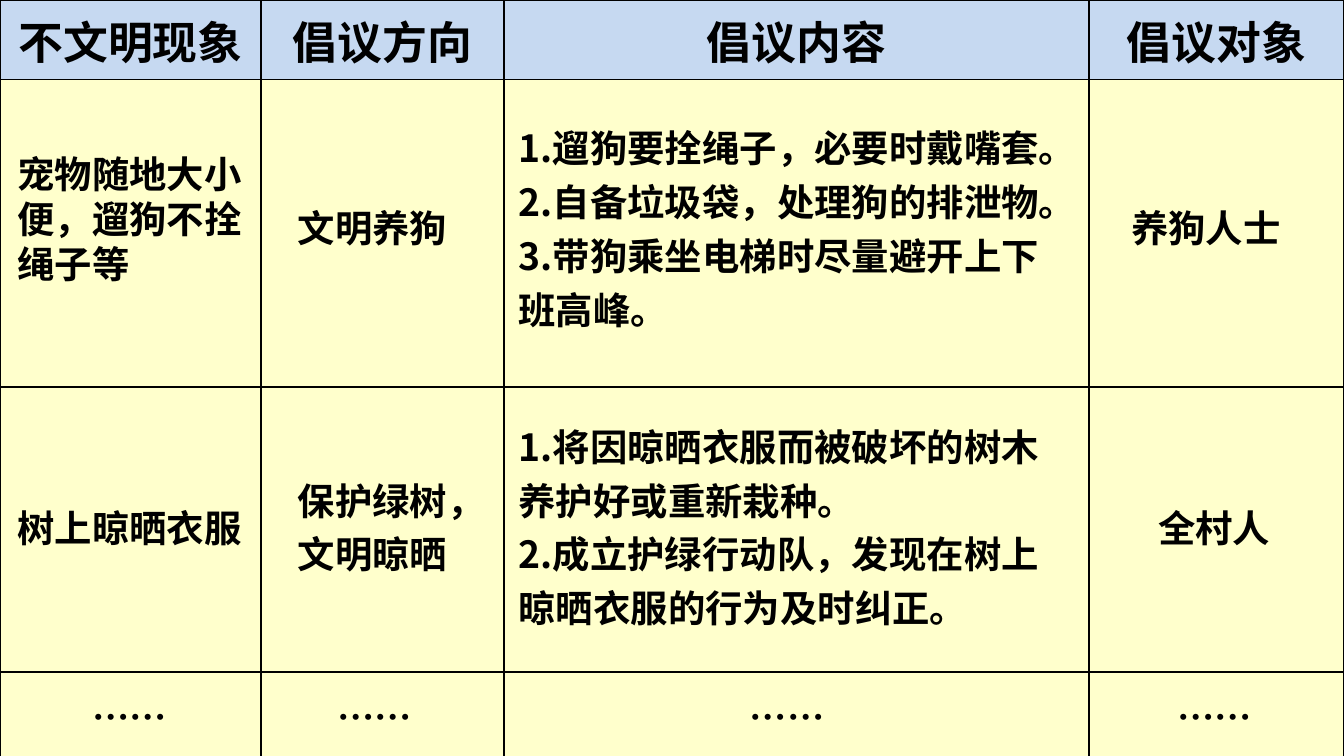
from dataclasses import dataclass

import pptx
import pptx.dml.color
import pptx.enum.text
import pptx.oxml
import pptx.oxml.ns
import pptx.util

Cm = pptx.util.Cm


@dataclass(frozen=True)
class Theme:
    font: str = "Noto Sans CJK SC"
    ink: str = "000000"
    header_fill: str = "C6D9F1"
    body_fill: str = "FFFFCC"
    header_size: int = 24
    body_size: int = 20
    border_width: int = 1
    line_spacing: float = 1.2


THEME = Theme()

COLUMN_WIDTHS = [4.93, 4.6, 11.05, 4.82]
ROW_HEIGHTS = [1.5, 5.82, 5.38, 1.6]
HEADERS = ["不文明现象", "倡议方向", "倡议内容", "倡议对象"]

# Each entry: box (left, top, width, height) in cm, paragraphs, wraps, line spacing
PET_ROW = [
    ((0.08, 2.74, 4.83, 2.82), ["宠物随地大小", "便，遛狗不拴", "绳子等"], False, 1.0),
    ((5.38, 3.58, 3.38, 1.14), ["文明养狗"], False, THEME.line_spacing),
    ((9.55, 2.08, 10.69, 4.22),
     ["1.遛狗要拴绳子，必要时戴嘴套。", "2.自备垃圾袋，处理狗的排泄物。",
      "3.带狗乘坐电梯时尽量避开上下班高峰。"], True, THEME.line_spacing),
    ((21.13, 3.58, 3.38, 1.14), ["养狗人士"], False, THEME.line_spacing),
]
LAUNDRY_ROW = [
    ((0.08, 9.25, 4.83, 1.27), ["树上晾晒衣服"], False, THEME.line_spacing),
    ((5.38, 8.74, 4.09, 2.31), ["保护绿树，", "文明晾晒"], False, THEME.line_spacing),
    ((9.55, 7.72, 10.69, 4.37),
     ["1.将因晾晒衣服而被破坏的树木养护好或重新栽种。",
      "2.成立护绿行动队，发现在树上晾晒衣服的行为及时纠正。"], True, THEME.line_spacing),
    ((21.64, 9.25, 2.67, 1.27), ["全村人"], False, THEME.line_spacing),
]
MORE_ROW = [
    ((left, 12.83, 1.96, 1.14), ["……"], False, THEME.line_spacing)
    for left in (1.5, 6.12, 13.92, 22.0)
]


def rgb(value):
    return pptx.dml.color.RGBColor.from_string(value)


def format_runs(paragraph, size):
    for run in paragraph.runs:
        run.font.size = pptx.util.Pt(size)
        run.font.bold = True
        run.font.name = THEME.font
        run.font.color.rgb = rgb(THEME.ink)
        east_asian = pptx.oxml.parse_xml(
            f'<a:ea {pptx.oxml.ns.nsdecls("a")} typeface="{THEME.font}"/>')
        run.font._element.find(pptx.oxml.ns.qn("a:latin")).addnext(east_asian)


def add_borders(cell):
    properties = cell._tc.get_or_add_tcPr()
    width = pptx.util.Pt(THEME.border_width)
    for side in ("lnL", "lnR", "lnT", "lnB"):
        properties.append(pptx.oxml.parse_xml(
            f'<a:{side} {pptx.oxml.ns.nsdecls("a")} w="{width}"><a:solidFill>'
            f'<a:srgbClr val="{THEME.ink}"/></a:solidFill></a:{side}>'))


def add_grid(slide, left, top, width, height):
    """Add the ruled table with its header row; its body cells hold only colour."""
    table = slide.shapes.add_table(
        len(ROW_HEIGHTS), len(COLUMN_WIDTHS),
        Cm(left), Cm(top), Cm(width), Cm(height)).table
    table.first_row = False
    table.horz_banding = False
    for column, column_width in zip(table.columns, COLUMN_WIDTHS):
        column.width = Cm(column_width)
    for row_index, (row, row_height) in enumerate(zip(table.rows, ROW_HEIGHTS)):
        row.height = Cm(row_height)
        for cell in row.cells:
            add_borders(cell)
            cell.fill.solid()
            cell.fill.fore_color.rgb = rgb(
                THEME.body_fill if row_index else THEME.header_fill)
    for cell, header in zip(table.rows[0].cells, HEADERS):
        cell.vertical_anchor = pptx.enum.text.MSO_ANCHOR.MIDDLE
        cell.text_frame.text = header
        paragraph = cell.text_frame.paragraphs[0]
        paragraph.alignment = pptx.enum.text.PP_ALIGN.CENTER
        format_runs(paragraph, THEME.header_size)


def add_entry(slide, box, lines, wraps, line_spacing):
    text_frame = slide.shapes.add_textbox(*map(Cm, box)).text_frame
    text_frame.word_wrap = wraps
    text_frame.auto_size = pptx.enum.text.MSO_AUTO_SIZE.SHAPE_TO_FIT_TEXT
    text_frame.text = "\n".join(lines)
    for paragraph in text_frame.paragraphs:
        paragraph.line_spacing = line_spacing
        format_runs(paragraph, THEME.body_size)


def main():
    presentation = pptx.Presentation()
    presentation.slide_width = Cm(25.4)
    presentation.slide_height = Cm(14.29)
    slide = presentation.slides.add_slide(presentation.slide_layouts[6])
    add_grid(slide, 0, 0, sum(COLUMN_WIDTHS), sum(ROW_HEIGHTS))
    for entry in PET_ROW + LAUNDRY_ROW + MORE_ROW:
        add_entry(slide, *entry)
    presentation.save("out.pptx")


if __name__ == "__main__":
    main()
